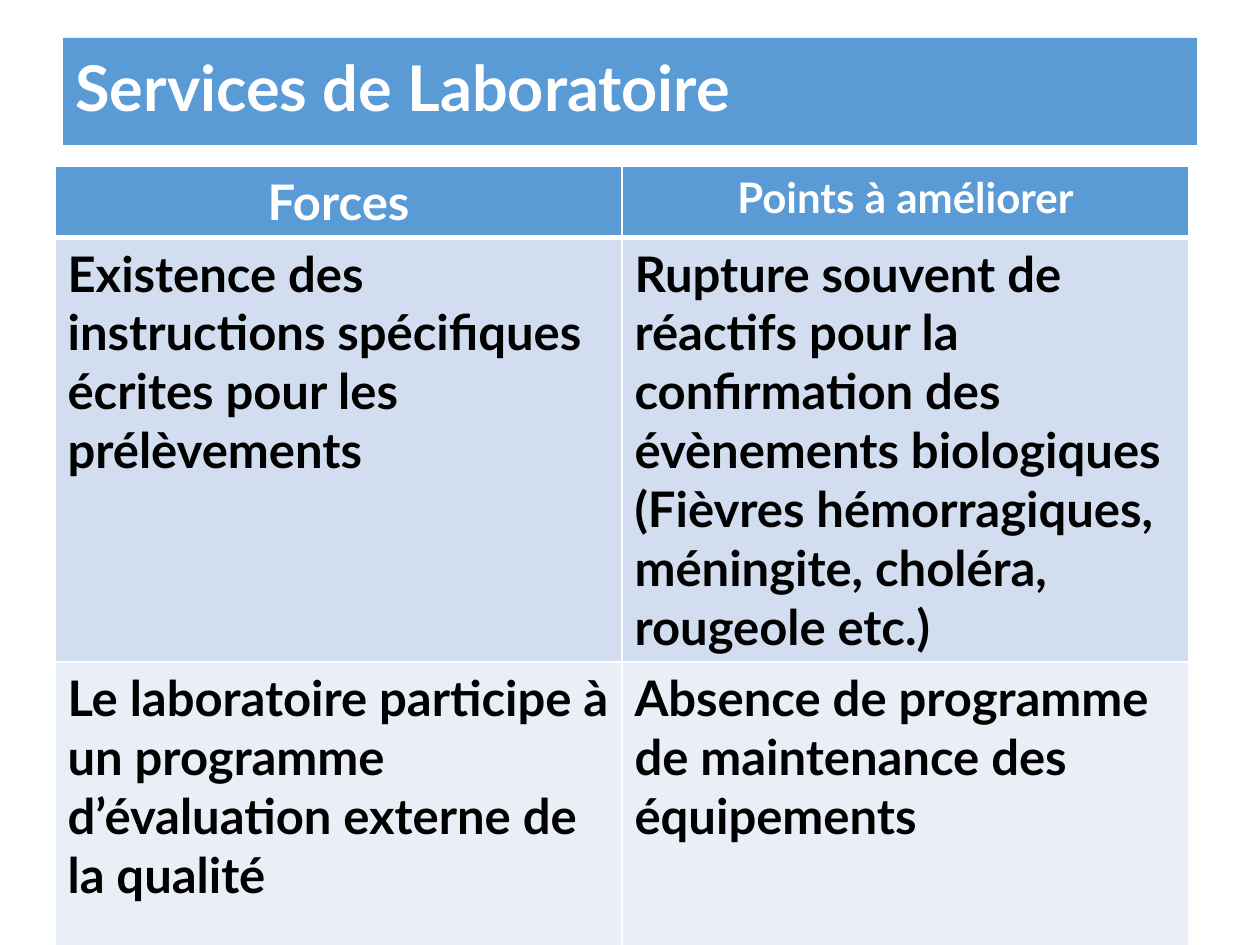
import pptx
import pptx.dml.color
import pptx.enum.text
import pptx.oxml
import pptx.oxml.ns
import pptx.util

PX = 914400 // 126
FONT = "Lato"
WHITE, BLACK, BLUE = "FFFFFF", "000000", "5B9BD5"
PALE, PALER = "D2DEEF", "EAEFF7"
ALIGN = pptx.enum.text.PP_ALIGN
ANCHOR = pptx.enum.text.MSO_ANCHOR

# Row height, fill, text colour, and (text, size) per column
ROWS = [
    (70, BLUE, WHITE, [("Forces", 28), ("Points à améliorer", 24)]),
    (424, PALE, BLACK, [
        ("Existence des instructions spécifiques écrites pour les prélèvements", 28),
        ("Rupture souvent de réactifs pour la confirmation des évènements "
         "biologiques (Fièvres hémorragiques, méningite, choléra, rougeole etc.)", 28)]),
    (307, PALER, BLACK, [
        ("Le laboratoire participe à un programme d’évaluation externe de la qualité", 28),
        ("Absence de programme de maintenance des équipements", 28)]),
    (170, PALE, BLACK, [("", 28), ("", 28)]),
]


def px(length):
    return pptx.util.Emu(length * PX)


def color(value):
    return pptx.dml.color.RGBColor.from_string(value)


def paint(target, value):
    target.fill.solid()
    target.fill.fore_color.rgb = color(value)


def write(frame, text, size=28, ink=BLACK, align=ALIGN.LEFT, spacing=1.0):
    para = frame.paragraphs[0]
    para.alignment = align
    para.line_spacing = spacing
    if not text:
        return
    span = para.add_run()
    span.text = text
    span.font.name = FONT
    span.font.size = pptx.util.Pt(size)
    span.font.bold = True
    span.font.color.rgb = color(ink)


def set_borders(cell, bottom=1, top=1):
    properties = cell._tc.get_or_add_tcPr()
    widths = {"lnL": 1, "lnR": 1, "lnT": top, "lnB": bottom}
    for position, (side, width) in enumerate(widths.items()):
        line = pptx.oxml.parse_xml(
            f'<a:{side} {pptx.oxml.ns.nsdecls("a")} w="{pptx.util.Pt(width)}">'
            f'<a:solidFill><a:srgbClr val="{WHITE}"/></a:solidFill></a:{side}>')
        properties.insert(position, line)


def add_title(page, text):
    title = page.shapes.title
    title.left, title.top, title.width, title.height = map(px, (63, 38, 1134, 107))
    paint(title, BLUE)
    title.text_frame.vertical_anchor = ANCHOR.MIDDLE
    title.text_frame.word_wrap = True
    write(title.text_frame, text, size=36, ink=WHITE, spacing=0.9)


def add_findings(page):
    height = sum(row[0] for row in ROWS)
    table = page.shapes.add_table(
        len(ROWS), 2, px(55), px(166), px(1134), px(height)).table
    for r, (row_height, fill, ink, entries) in enumerate(ROWS):
        table.rows[r].height = px(row_height)
        for c, (text, size) in enumerate(entries):
            cell = table.cell(r, c)
            paint(cell, fill)
            set_borders(cell, bottom=3 if r == 0 else 1, top=3 if r == 1 else 1)
            write(cell.text_frame, text, size=size, ink=ink,
                  align=ALIGN.CENTER if r == 0 else ALIGN.LEFT)


def main():
    deck = pptx.Presentation()
    deck.slide_width, deck.slide_height = px(1260), px(945)
    page = deck.slides.add_slide(deck.slide_layouts[5])
    # Title band
    add_title(page, "Services de Laboratoire")
    # Strengths and points to improve
    add_findings(page)
    deck.save("out.pptx")


if __name__ == "__main__":
    main()
